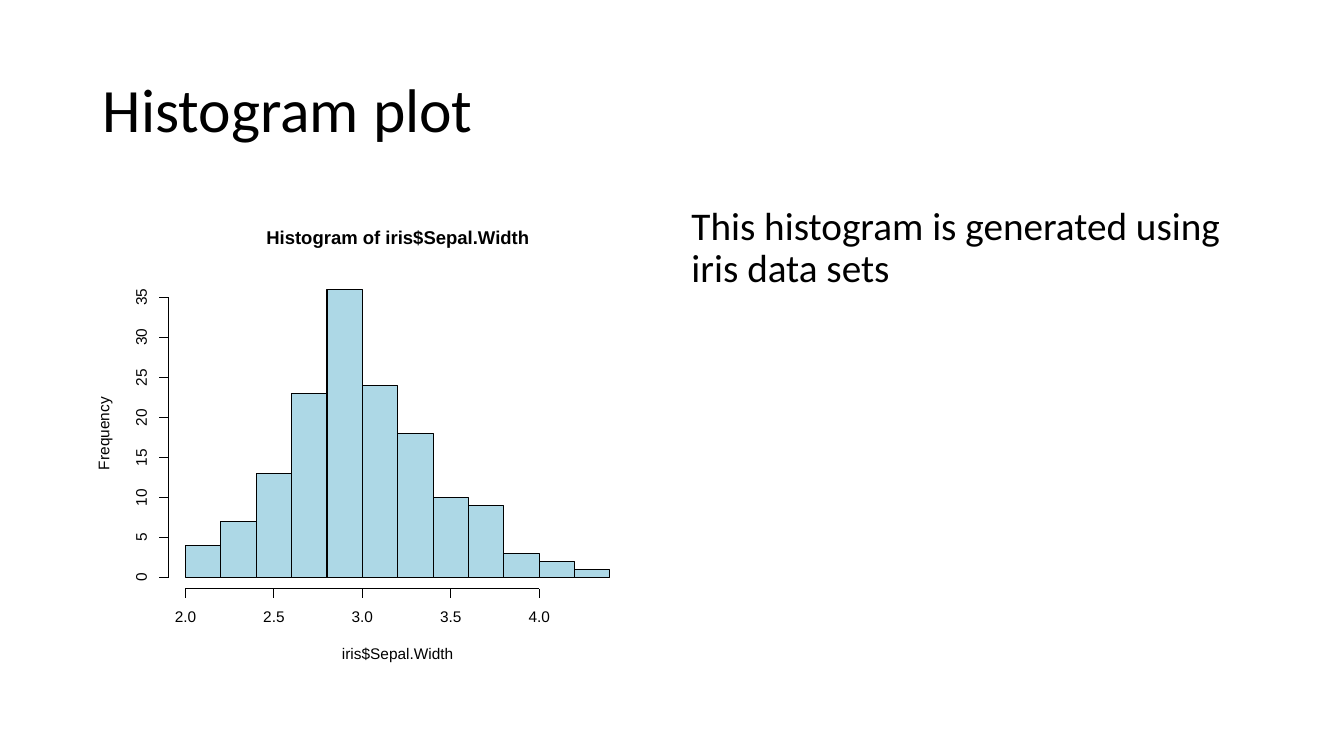
from collections import namedtuple

from lxml import etree
from pptx import Presentation
from pptx import util as u
from pptx.dml.color import RGBColor
from pptx.enum import shapes, text
from pptx.oxml.ns import qn

Box = namedtuple("Box", "left top width height")

SLIDE_W, SLIDE_H = 13.33, 7.5
BLACK, BAR_BLUE = "000000", "ADD8E6"
LINE_PT = 0.75

COUNTS = [4, 7, 13, 23, 36, 24, 18, 10, 9, 3, 2, 1]
FIRST_EDGE, BIN_WIDTH = 2.0, 0.2
WIDTH_TICKS = [2.0, 2.5, 3.0, 3.5, 4.0]
COUNT_TICKS = range(0, 36, 5)
TICK = 0.09


def color(hex_string):
    return RGBColor.from_string(hex_string)


def inches(*lengths):
    return [u.Inches(length) for length in lengths]


def write(frame, words, size, font="Arial", bold=False, spacing=0.9,
          align=text.PP_ALIGN.LEFT, anchor=text.MSO_ANCHOR.TOP):
    frame.word_wrap = True
    frame.auto_size = text.MSO_AUTO_SIZE.NONE
    frame.vertical_anchor = anchor
    paragraph = frame.paragraphs[0]
    paragraph.alignment = align
    paragraph.line_spacing = spacing
    run = paragraph.add_run()
    run.text = words
    run.font.size = u.Pt(size)
    run.font.name = font
    run.font.bold = bold
    run.font.color.rgb = color(BLACK)


def add_label(parent, words, x, y, width, size=11, bold=False, rotation=0):
    """Place one centred line of plot text around the point x, y."""
    height = size / 72
    label = parent.add_textbox(*inches(x - width / 2, y - height / 2, width, height))
    label.rotation = rotation
    frame = label.text_frame
    frame.margin_left = frame.margin_right = frame.margin_top = frame.margin_bottom = 0
    write(frame, words, size, bold=bold, spacing=u.Pt(size),
          align=text.PP_ALIGN.CENTER, anchor=text.MSO_ANCHOR.BOTTOM)


def add_line(parent, x1, y1, x2, y2):
    line = parent.add_connector(shapes.MSO_CONNECTOR.STRAIGHT, *inches(x1, y1, x2, y2))
    line.line.color.rgb = color(BLACK)
    line.line.width = u.Pt(LINE_PT)
    etree.SubElement(line._element.spPr, qn("a:effectLst"))


def add_bar(parent, box):
    bar = parent.add_shape(shapes.MSO_SHAPE.RECTANGLE, *inches(*box))
    bar.shadow.inherit = False
    bar.fill.solid()
    bar.fill.fore_color.rgb = color(BAR_BLUE)
    bar.line.color.rgb = color(BLACK)
    bar.line.width = u.Pt(LINE_PT)


def add_histogram(slide, plot):
    """Draw bars that fill the plot box, with detached axes outside it."""
    parent = slide.shapes.add_group_shape().shapes
    bar_width = plot.width / len(COUNTS)
    count_height = plot.height / max(COUNTS)
    base = plot.top + plot.height
    center_x = plot.left + plot.width / 2
    center_y = plot.top + plot.height / 2

    def x_of(sepal_width):
        return plot.left + (sepal_width - FIRST_EDGE) / BIN_WIDTH * bar_width

    def y_of(count):
        return base - count * count_height

    add_label(parent, "Histogram of iris$Sepal.Width", center_x, plot.top - 0.5, 3,
              size=13.2, bold=True)
    add_label(parent, "iris$Sepal.Width", center_x, base + 0.77, 1.3)
    add_label(parent, "Frequency", plot.left - 0.8, center_y, 1, rotation=270)

    width_axis = base + 0.11
    add_line(parent, x_of(WIDTH_TICKS[0]), width_axis, x_of(WIDTH_TICKS[-1]), width_axis)
    for sepal_width in WIDTH_TICKS:
        x = x_of(sepal_width)
        add_line(parent, x, width_axis, x, width_axis + TICK)
        add_label(parent, f"{sepal_width:.1f}", x, base + 0.4, 0.42)

    count_axis = plot.left - 0.17
    add_line(parent, count_axis, y_of(COUNT_TICKS[0]), count_axis, y_of(COUNT_TICKS[-1]))
    for count in COUNT_TICKS:
        y = y_of(count)
        add_line(parent, count_axis, y, count_axis - TICK, y)
        add_label(parent, str(count), plot.left - 0.43, y, 0.25, rotation=270)

    for index, count in enumerate(COUNTS):
        add_bar(parent, Box(plot.left + index * bar_width, y_of(count),
                            bar_width, count * count_height))


def add_title(slide, box):
    title = slide.shapes.title
    title.left, title.top, title.width, title.height = inches(*box)
    write(title.text_frame, "Histogram plot", 44, font="Calibri",
          anchor=text.MSO_ANCHOR.MIDDLE)


def add_description(slide, box):
    description = slide.shapes.add_textbox(*inches(*box))
    write(description.text_frame, "This histogram is generated using iris data sets",
          28, font="Calibri")


def main():
    deck = Presentation()
    deck.slide_width, deck.slide_height = inches(SLIDE_W, SLIDE_H)
    slide = deck.slides.add_slide(deck.slide_layouts.get_by_name("Title Only"))
    add_title(slide, Box(0.92, 0.39, 11.5, 1.45))
    add_histogram(slide, Box(1.84, 2.87, 4.21, 2.86))
    add_description(slide, Box(6.76, 2, 5.66, 4.76))
    deck.save("out.pptx")


if __name__ == "__main__":
    main()
